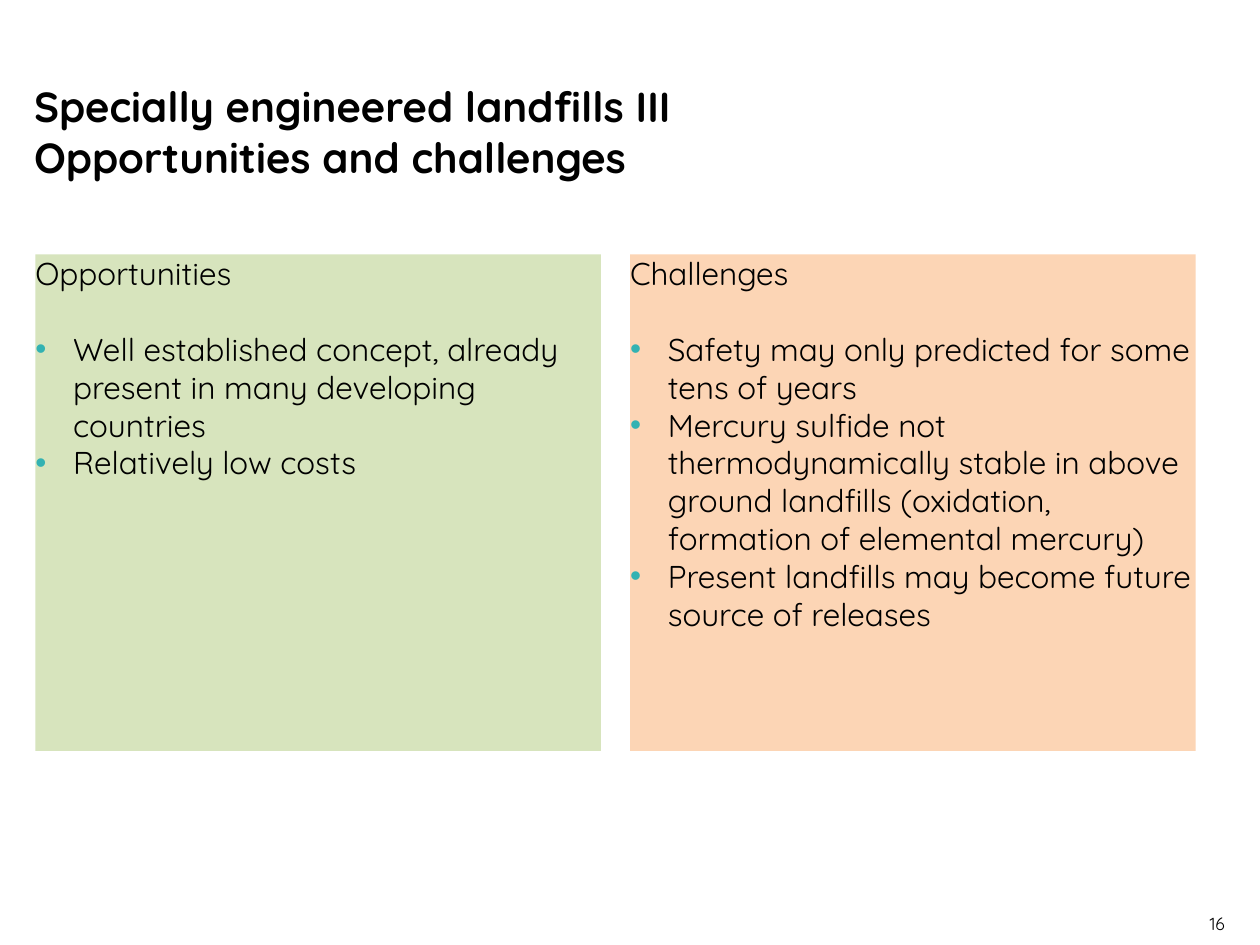
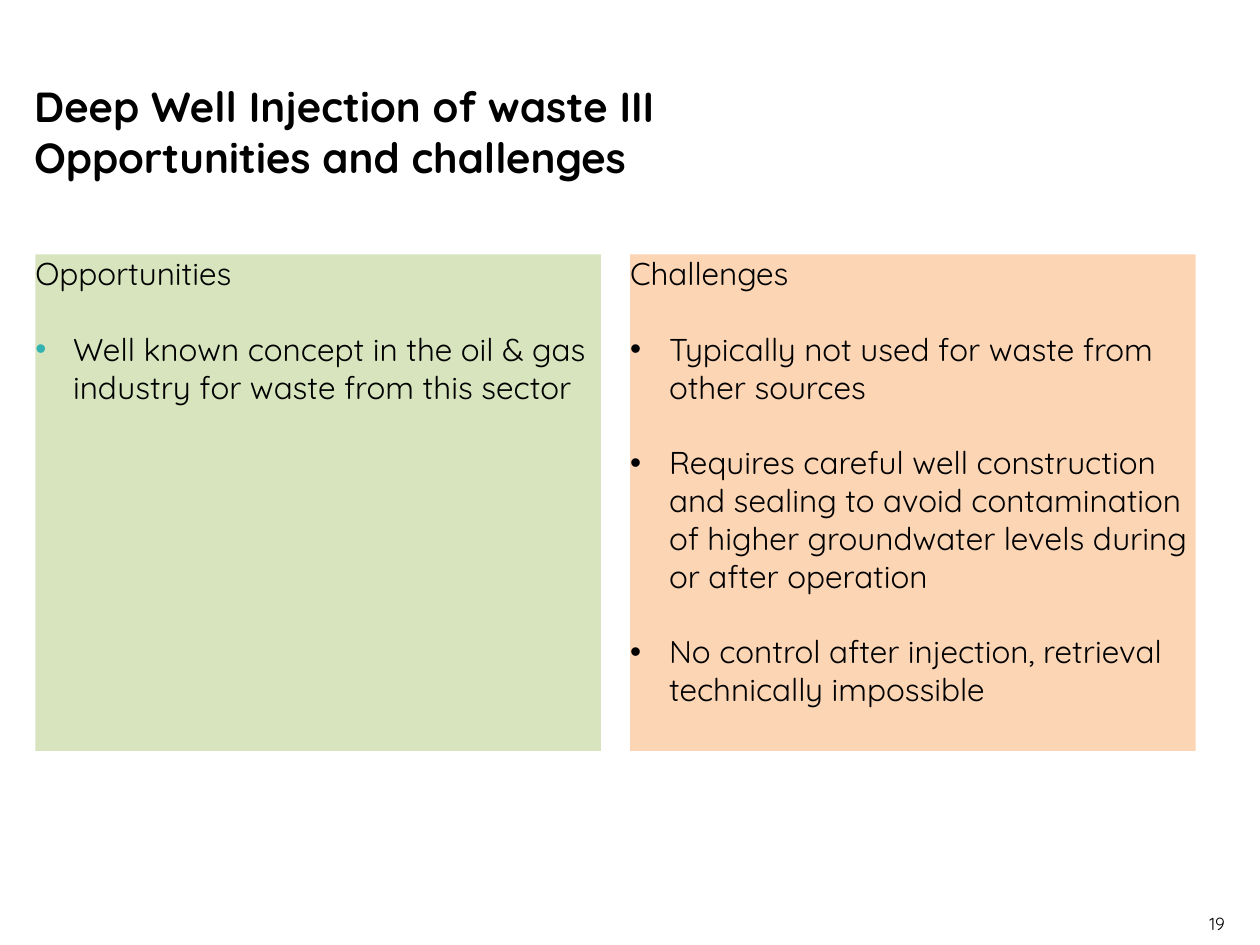
import pptx
import pptx.dml.color
import pptx.enum.shapes
import pptx.enum.text
import pptx.oxml.ns
import pptx.util
import lxml.etree

Inches = pptx.util.Inches
Pt = pptx.util.Pt
Color = pptx.dml.color.RGBColor.from_string

# Shared colours, font and type sizes
theme = {
    "font": "Quicksand",
    "text": "000000", "accent": "33B2B2",
    "opportunities": "D7E4BD", "challenges": "FCD5B5",
    "title_size": 24, "body_size": 18, "number_size": 10,
    "line_gap": 21.6,
}
panel_left, panel_top, panel_width, panel_height = 0.28, 2.02, 4.49, 3.94
panel_step = 4.72

# Each panel: heading, fill, bullet colour, indent, gap between bullets, bullets
pages = [
    ("Specially engineered landfills III", "16", [
        ("Opportunities", "opportunities", "accent", 0.3, 0, [
            "Well established concept, already present in many developing countries",
            "Relatively low costs",
        ]),
        ("Challenges", "challenges", "accent", 0.3, 0, [
            "Safety may only predicted for some tens of years",
            "Mercury sulfide not thermodynamically stable in above ground landfills "
            "(oxidation, formation of elemental mercury)",
            "Present landfills may become future source of releases",
        ]),
    ]),
    ("Deep Well Injection of waste III", "19", [
        ("Opportunities", "opportunities", "accent", 0.3, 0, [
            "Well known concept in the oil & gas industry for waste from this sector",
        ]),
        ("Challenges", "challenges", "text", 0.31, theme["line_gap"], [
            "Typically not used for waste from other sources",
            "Requires careful well construction and sealing to avoid contamination "
            "of higher groundwater levels during or after operation",
            "No control after injection, retrieval technically impossible",
        ]),
    ]),
]


def write(box, text, size, bold=False, align="LEFT", first=True):
    """Write one styled paragraph into a box without margins."""
    frame = box.text_frame
    frame_format = {
        "word_wrap": True, "vertical_anchor": pptx.enum.text.MSO_ANCHOR.TOP,
        "margin_left": 0, "margin_top": 0, "margin_right": 0, "margin_bottom": 0,
    }
    for name, value in frame_format.items():
        setattr(frame, name, value)
    para = frame.paragraphs[0] if first else frame.add_paragraph()
    para.alignment = getattr(pptx.enum.text.PP_ALIGN, align)
    para.text = text
    for span in para.runs:
        for name, value in {"name": theme["font"], "size": Pt(size), "bold": bold}.items():
            setattr(span.font, name, value)
        span.font.color.rgb = Color(theme["text"])
    return para


def add_bullet(para, color, indent):
    """Give a paragraph a coloured bullet with a hanging indent."""
    properties = para._p.get_or_add_pPr()
    properties.set("marL", str(Inches(indent)))
    properties.set("indent", str(-Inches(indent)))
    qn = pptx.oxml.ns.qn
    bullet_color = lxml.etree.SubElement(properties, qn("a:buClr"))
    lxml.etree.SubElement(bullet_color, qn("a:srgbClr"), val=color)
    lxml.etree.SubElement(properties, qn("a:buFont"), typeface="Arial")
    lxml.etree.SubElement(properties, qn("a:buChar"), char="•")


deck = pptx.Presentation()
deck.slide_width = Inches(10)
deck.slide_height = Inches(7.5)

for topic, number, panels in pages:
    page = deck.slides.add_slide(deck.slide_layouts[6])

    # Title and page number
    title = page.shapes.add_textbox(Inches(0.27), Inches(0.64), Inches(8.38), Inches(0.91))
    write(title, topic + "\vOpportunities and challenges", theme["title_size"], bold=True)
    page_number = page.shapes.add_textbox(Inches(9.03), Inches(7.25), Inches(0.69), Inches(0.2))
    write(page_number, number, theme["number_size"], align="RIGHT")

    # Two panels side by side
    for column, (heading, fill, bullet, indent, gap, points) in enumerate(panels):
        panel = page.shapes.add_shape(
            pptx.enum.shapes.MSO_SHAPE.RECTANGLE,
            Inches(panel_left + column * panel_step), Inches(panel_top),
            Inches(panel_width), Inches(panel_height))
        panel.shadow.inherit = False
        panel.fill.solid()
        panel.fill.fore_color.rgb = Color(theme[fill])
        panel.line.fill.background()
        write(panel, heading, theme["body_size"])
        for index, point in enumerate(points):
            para = write(panel, point, theme["body_size"], first=False)
            add_bullet(para, theme[bullet], indent)
            para.space_before = Pt(gap if index else theme["line_gap"])

deck.save("out.pptx")
